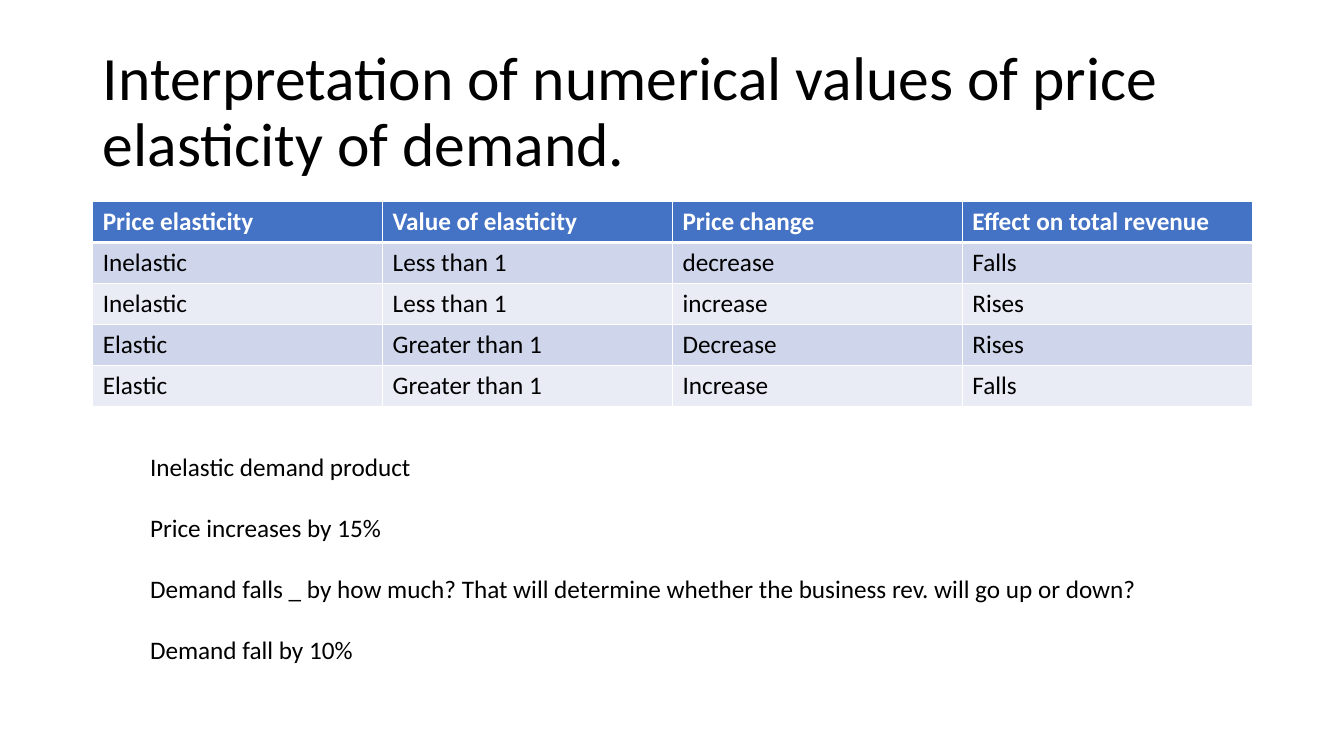
from lxml import etree
from pptx import Presentation
from pptx.dml.color import RGBColor
from pptx.enum import text
from pptx.oxml import ns
from pptx.util import Inches, Pt

FONT = "Calibri"
BLACK = RGBColor(0x00, 0x00, 0x00)
WHITE = RGBColor(0xFF, 0xFF, 0xFF)
HEADER_BLUE = RGBColor(0x44, 0x72, 0xC4)
BANDS = (RGBColor(0xE9, 0xEB, 0xF5), RGBColor(0xCF, 0xD5, 0xEA))

TITLE = "Interpretation of numerical values of price elasticity of demand."
ROWS = [
    ("Price elasticity", "Value of elasticity", "Price change", "Effect on total revenue"),
    ("Inelastic", "Less than 1", "decrease", "Falls"),
    ("Inelastic", "Less than 1", "increase", "Rises"),
    ("Elastic", "Greater than 1", "Decrease", "Rises"),
    ("Elastic", "Greater than 1", "Increase", "Falls"),
]
EXAMPLE = [
    "Inelastic demand product",
    "Price increases by 15%",
    "Demand falls _ by how much? That will determine whether the business rev. will go up or down?",
    "Demand fall by 10%",
]


def set_font(p, size, color=BLACK, bold=False):
    p.font.name = FONT
    p.font.size = Pt(size)
    p.font.color.rgb = color
    p.font.bold = bold


def add_border(cell, side, width):
    tc_pr = cell._tc.get_or_add_tcPr()
    ln = etree.SubElement(tc_pr, ns.qn(f"a:ln{side}"), w=str(Pt(width)))
    fill = etree.SubElement(ln, ns.qn("a:solidFill"))
    etree.SubElement(fill, ns.qn("a:srgbClr"), val=str(WHITE))


def set_title(slide, title):
    sp = slide.shapes.title
    sp.left, sp.top = Inches(0.92), Inches(0.4)
    sp.width, sp.height = Inches(11.5), Inches(1.45)
    tf = sp.text_frame
    tf.text = title
    tf.auto_size = text.MSO_AUTO_SIZE.NONE
    tf.vertical_anchor = text.MSO_ANCHOR.MIDDLE
    p = tf.paragraphs[0]
    p.alignment = text.PP_ALIGN.LEFT
    p.line_spacing = 0.9
    set_font(p, 44)


def add_elasticity_table(slide):
    frame = slide.shapes.add_table(len(ROWS), len(ROWS[0]), Inches(0.92), Inches(2),
                                   Inches(11.5), Inches(2.03))
    for i, row in enumerate(ROWS):
        header = i == 0
        for j, value in enumerate(row):
            cell = frame.table.cell(i, j)
            cell.text = value
            set_font(cell.text_frame.paragraphs[0], 18, WHITE if header else BLACK, header)
            # Thicker rule between the header and the body
            for side, width in (("L", 1), ("R", 1), ("T", 3 if i == 1 else 1),
                                ("B", 3 if header else 1)):
                add_border(cell, side, width)
            cell.fill.solid()
            cell.fill.fore_color.rgb = HEADER_BLUE if header else BANDS[i % 2]


def add_example(slide):
    sp = slide.shapes.add_textbox(Inches(1.39), Inches(4.43), Inches(10), Inches(2.52))
    tf = sp.text_frame
    tf.word_wrap = True
    tf.text = "\n".join(EXAMPLE)
    for p in tf.paragraphs:
        set_font(p, 18)
    for p in tf.paragraphs[1:]:
        p.space_before = Pt(22)


def main():
    prs = Presentation()
    prs.slide_width, prs.slide_height = Inches(13.33), Inches(7.5)
    slide = prs.slides.add_slide(prs.slide_layouts[5])  # Title Only

    set_title(slide, TITLE)
    add_elasticity_table(slide)
    add_example(slide)

    prs.save("out.pptx")


if __name__ == "__main__":
    main()
